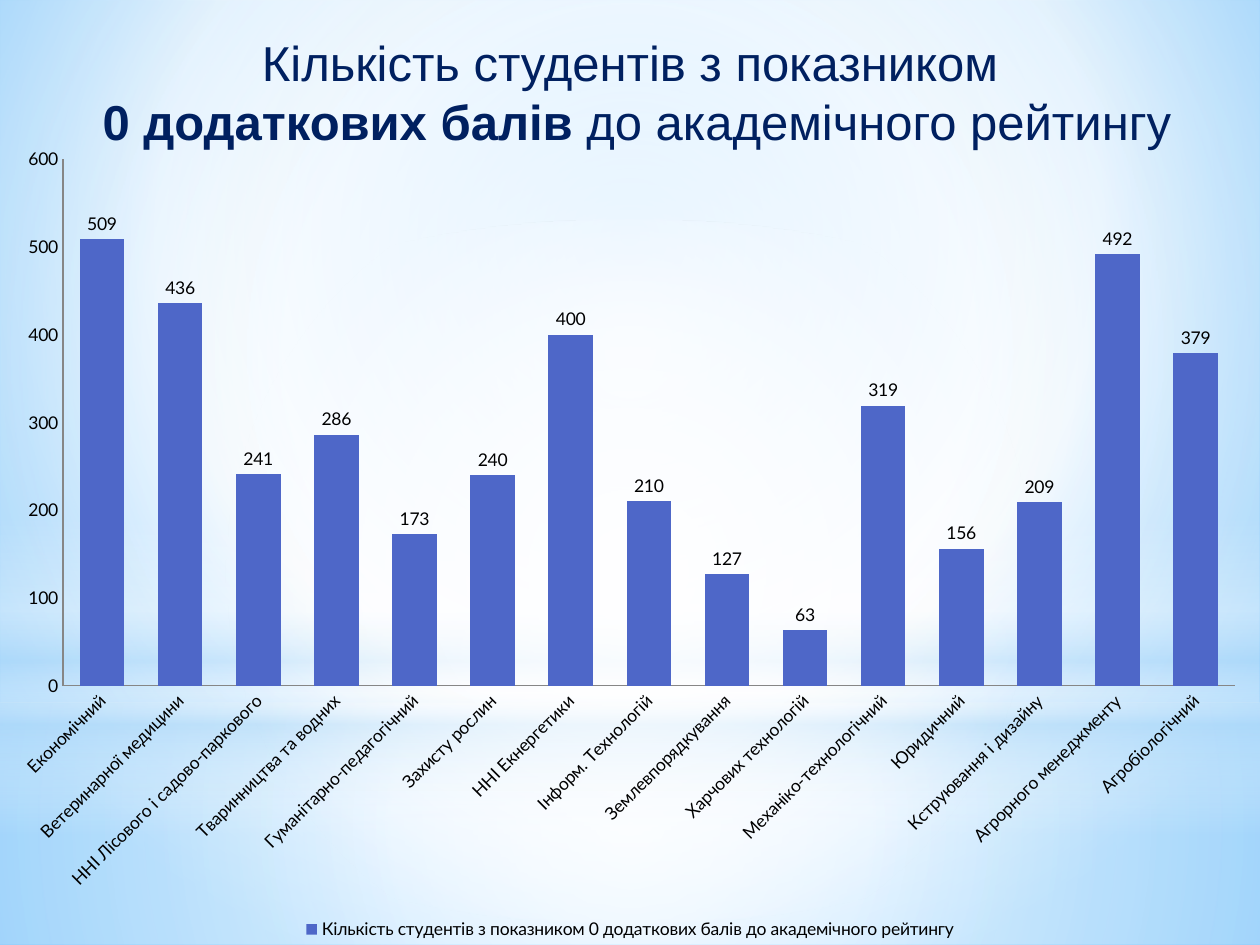
from lxml import etree
from pptx import Presentation
from pptx.chart.data import CategoryChartData
from pptx.dml.color import RGBColor
from pptx.enum.chart import XL_CHART_TYPE as CT, XL_LABEL_POSITION as LP
from pptx.enum.chart import XL_LEGEND_POSITION as LEG, XL_TICK_MARK as TICK
from pptx.enum.shapes import MSO_SHAPE as SHAPE
from pptx.enum.text import PP_ALIGN, MSO_AUTO_SIZE as AUTO
from pptx.oxml import parse_xml
from pptx.oxml.ns import nsdecls, qn
from pptx.util import Pt

PX = 914400 / 126


def box(*lengths):
    """Turn px lengths into EMU."""
    return [round(n * PX) for n in lengths]


def set_gradient(fill, element, stops, shade):
    """Fill with (position, colour, opacity) stops, all in percent."""
    fill.solid()
    gs = "".join(
        f'<a:gs pos="{pos * 1000}"><a:srgbClr val="{color}">'
        f'<a:alpha val="{alpha * 1000}"/></a:srgbClr></a:gs>'
        for pos, color, alpha in stops)
    if shade == "linear":
        way = '<a:lin ang="5400000" scaled="0"/>'
    else:
        l, t, r, b = (n * 1000 for n in shade)
        way = (f'<a:path path="circle"><a:fillToRect l="{l}" t="{t}" '
               f'r="{r}" b="{b}"/></a:path>')
    grad = parse_xml(f'<a:gradFill {nsdecls("a")} rotWithShape="1">'
                     f'<a:gsLst>{gs}</a:gsLst>{way}</a:gradFill>')
    solid = next(element.iter(qn("a:solidFill")))
    solid.getparent().replace(solid, grad)


prs = Presentation()
prs.slide_width, prs.slide_height = box(1260, 945)
s = prs.slides.add_slide(prs.slide_layouts[6])

# Background and its soft light layers
WHITE, SKY = "FFFFFF", "B4DCFA"
CENTER = (50, 50, 50, 50)
set_gradient(s.background.fill, s.element,
             [(0, "9ED5FF", 100), (60, WHITE, 100), (100, "5BB9FF", 100)],
             (20, 10, 20, 60))
layers = [
    (SHAPE.RECTANGLE, 703, 242, CENTER,
     [(0, WHITE, 91), (37, WHITE, 76), (100, SKY, 79)]),
    (SHAPE.RECTANGLE, 0, 703, CENTER,
     [(0, WHITE, 89), (48, WHITE, 62), (100, SKY, 79)]),
    (SHAPE.RECTANGLE, 519, 315, "linear",
     [(0, WHITE, 0), (29, WHITE, 30), (45, SKY, 40),
      (55, WHITE, 26), (65, SKY, 60), (100, WHITE, 0)]),
    (SHAPE.OVAL, 220, 703, CENTER, [(0, WHITE, 100), (56, WHITE, 0)]),
]
for kind, top, height, shade, stops in layers:
    sp = s.shapes.add_shape(kind, *box(0, top, 1260, height))
    sp.shadow.inherit = False
    sp.line.fill.background()
    set_gradient(sp.fill, sp.element, stops, shade)

# Column chart
students = {
    "Економічний": 509,
    "Ветеринарної медицини": 436,
    "ННІ Лісового і садово-паркового": 241,
    "Тваринництва та водних": 286,
    "Гуманітарно-педагогічний": 173,
    "Захисту рослин": 240,
    "ННІ Екнергетики": 400,
    "Інформ. Технологій": 210,
    "Землевпорядкування": 127,
    "Харчових технологій": 63,
    "Механіко-технологічний": 319,
    "Юридичний": 156,
    "Кструювання і дизайну": 209,
    "Агрорного менеджменту": 492,
    "Агробіологічний": 379,
}
data = CategoryChartData()
data.categories = list(students)
data.add_series("Кількість студентів з показником 0 додаткових балів "
                "до академічного рейтингу", list(students.values()))
chart = s.shapes.add_chart(CT.COLUMN_CLUSTERED, *box(0, 135, 1260, 810),
                           data).chart
chart.has_title = False
chart.font.name, chart.font.size = "Lato", Pt(10)
chart.font.color.rgb = RGBColor.from_string("000000")
chart.has_legend = True
chart.legend.position = LEG.BOTTOM
chart.legend.include_in_layout = False

plot = chart.plots[0]
plot.gap_width = 75
plot.vary_by_categories = False
fill = plot.series[0].format.fill
fill.solid()
fill.fore_color.rgb = RGBColor.from_string("4E67C8")
plot.has_data_labels = True
plot.data_labels.show_value = True
plot.data_labels.position = LP.OUTSIDE_END

for axis in (chart.category_axis, chart.value_axis):
    axis.has_major_gridlines = False
    axis.major_tick_mark = axis.minor_tick_mark = TICK.NONE
    axis.format.line.width = Pt(0.75)
    axis.format.line.color.rgb = RGBColor.from_string("868686")
    axis.tick_labels.font.size = Pt(10)
for name, value in {"minimum_scale": 0, "maximum_scale": 600,
                    "major_unit": 100}.items():
    setattr(chart.value_axis, name, value)
slant = next(chart.category_axis.format.line and
             chart.category_axis.tick_labels.font and
             chart._chartSpace.catAx_lst[0].iter(qn("a:bodyPr")))
slant.set("rot", "-2700000")

# Plot area as shares of the chart frame
area = next(chart._chartSpace.iter(qn("c:plotArea")))
for old in area.findall(qn("c:layout")):
    area.remove(old)
layout = etree.Element(qn("c:layout"))
manual = etree.SubElement(layout, qn("c:manualLayout"))
for tag, val in {"layoutTarget": "inner", "xMode": "edge", "yMode": "edge",
                 "x": 0.05, "y": 0.03, "w": 0.93, "h": 0.65}.items():
    etree.SubElement(manual, qn(f"c:{tag}")).set("val", str(val))
area.insert(0, layout)

# Title
tf = s.shapes.add_textbox(*box(69, 26, 1122, 131)).text_frame
tf.word_wrap = False
tf.auto_size = AUTO.SHAPE_TO_FIT_TEXT
lines = [
    [("Кількість студентів з показником", False)],
    [(" ", False), ("0 додаткових балів ", True),
     ("до академічного рейтингу", False)],
]
for i, runs in enumerate(lines):
    p = tf.add_paragraph() if i else tf.paragraphs[0]
    p.alignment = PP_ALIGN.CENTER
    for text, bold in runs:
        r = p.add_run()
        r.text = text
        for name, value in {"name": "Arial", "size": Pt(28),
                            "bold": bold}.items():
            setattr(r.font, name, value)
        r.font.color.rgb = RGBColor.from_string("002060")

prs.save("out.pptx")
